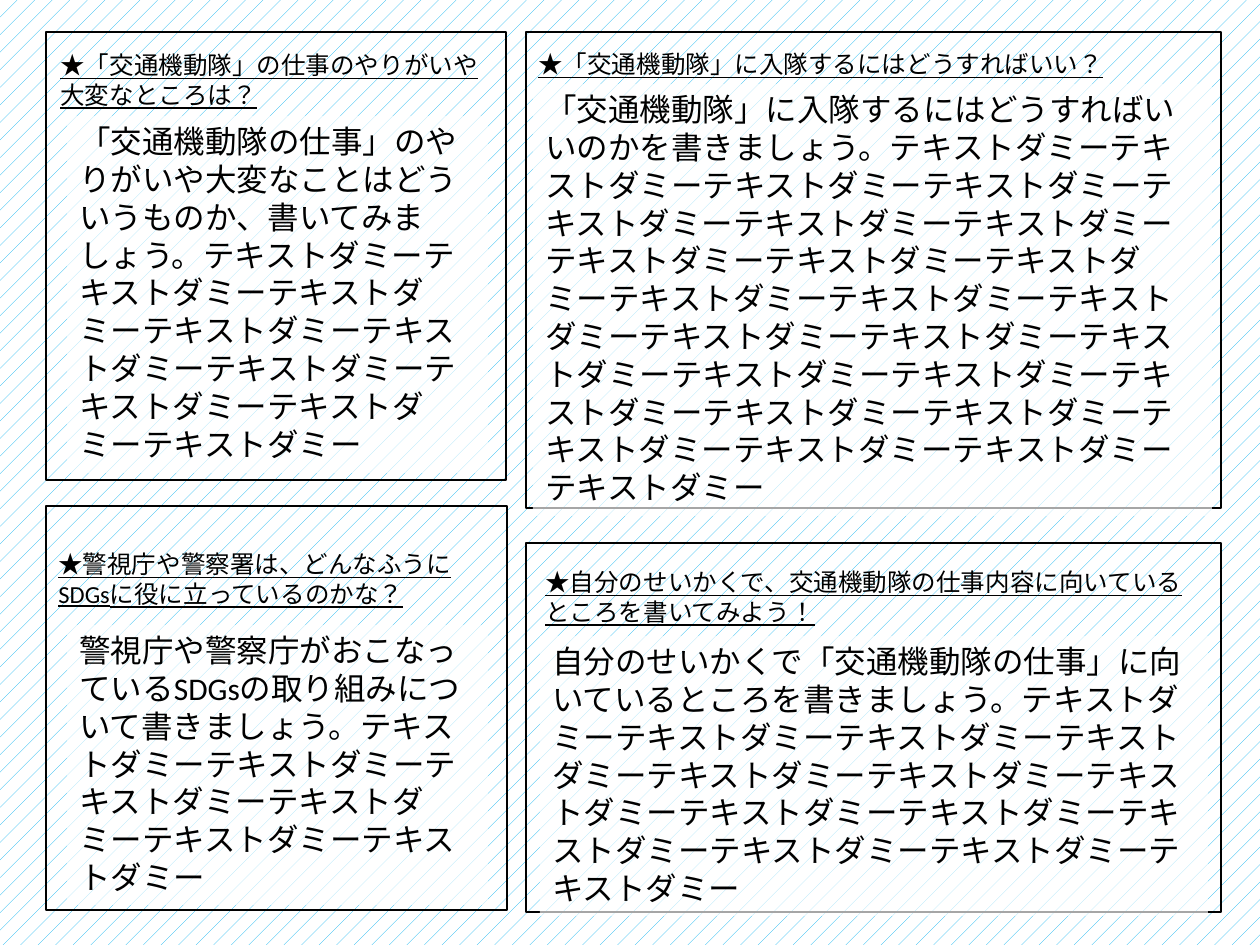
"""Build a four-panel worksheet slide about the traffic mobile unit."""
import dataclasses

import lxml.etree
import pptx
import pptx.dml.color
import pptx.enum.dml
import pptx.enum.lang
import pptx.enum.shapes
import pptx.enum.text
import pptx.oxml.ns
import pptx.util

PX = pptx.util.Inches(1) / 126
COLORS = {"ink": "000000", "paper": "FFFFFF", "stripe": "00B0F0"}
BODY_OPACITY = 65
DUMMY = "テキストダミー"
HEADING_FORMAT = {"size": pptx.util.Pt(14), "underline": True}
BODY_FORMAT = {"size": pptx.util.Pt(18)}
SHARED_FORMAT = {"name": "Calibri", "language_id": pptx.enum.lang.MSO_LANGUAGE_ID.JAPANESE}
FRAME_FORMAT = {
    "word_wrap": True,
    "auto_size": pptx.enum.text.MSO_AUTO_SIZE.SHAPE_TO_FIT_TEXT,
    "vertical_anchor": pptx.enum.text.MSO_ANCHOR.TOP,
}


@dataclasses.dataclass(frozen=True)
class Box:
    left: int
    top: int
    width: int
    height: int

    def emu(self) -> list[int]:
        return [round(value * PX) for value in dataclasses.astuple(self)]


@dataclasses.dataclass(frozen=True)
class Panel:
    frame: Box
    heading_box: Box
    heading: str
    body_box: Box
    prompt: str
    dummy_count: int


PANELS = [
    Panel(
        Box(526, 32, 695, 476),
        Box(526, 43, 747, 42),
        "★「交通機動隊」に入隊するにはどうすればいい？",
        Box(533, 84, 679, 432),
        "「交通機動隊」に入隊するにはどうすればいいのかを書きましょう。",
        25,
    ),
    Panel(
        Box(526, 543, 695, 369),
        Box(533, 561, 668, 72),
        "★自分のせいかくで、交通機動隊の仕事内容に向いているところを書いてみよう！",
        Box(540, 636, 668, 280),
        "自分のせいかくで「交通機動隊の仕事」に向いているところを書きましょう。",
        13,
    ),
    Panel(
        Box(46, 506, 461, 404),
        Box(46, 543, 461, 72),
        "★警視庁や警察署は、どんなふうにSDGsに役に立っているのかな？",
        Box(67, 625, 421, 280),
        "警視庁や警察庁がおこなっているSDGsの取り組みについて書きましょう。",
        6,
    ),
    Panel(
        Box(46, 32, 460, 448),
        Box(48, 44, 461, 72),
        "★「交通機動隊」の仕事のやりがいや大変なところは？",
        Box(67, 116, 421, 357),
        "「交通機動隊の仕事」のやりがいや大変なことはどういうものか、書いてみましょう。",
        9,
    ),
]


def color(name: str) -> pptx.dml.color.RGBColor:
    return pptx.dml.color.RGBColor.from_string(COLORS[name])


def apply_format(target: object, values: dict) -> None:
    for name, value in values.items():
        setattr(target, name, value)


def write_text(shape, text: str, text_format: dict) -> None:
    apply_format(shape.text_frame, FRAME_FORMAT)
    paragraph = shape.text_frame.paragraphs[0]
    paragraph.alignment = pptx.enum.text.PP_ALIGN.LEFT
    run = paragraph.add_run()
    run.text = text
    apply_format(run.font, SHARED_FORMAT | text_format)
    run.font.color.rgb = color("ink")


def add_rectangle(slide, box: Box):
    shape = slide.shapes.add_shape(pptx.enum.shapes.MSO_SHAPE.RECTANGLE, *box.emu())
    shape.shadow.inherit = False
    return shape


def add_frame(slide, box: Box) -> None:
    shape = add_rectangle(slide, box)
    shape.fill.background()
    shape.line.color.rgb = color("ink")
    shape.line.width = pptx.util.Pt(1)


def add_body(slide, box: Box, text: str) -> None:
    shape = add_rectangle(slide, box)
    shape.line.fill.background()
    shape.fill.solid()
    shape.fill.fore_color.rgb = color("paper")
    fill_color = shape.fill._xPr.find(".//" + pptx.oxml.ns.qn("a:srgbClr"))
    alpha = lxml.etree.SubElement(fill_color, pptx.oxml.ns.qn("a:alpha"))
    alpha.set("val", str(BODY_OPACITY * 1000))
    write_text(shape, text, BODY_FORMAT)


def add_panel(slide, panel: Panel) -> None:
    add_frame(slide, panel.frame)
    heading = slide.shapes.add_textbox(*panel.heading_box.emu())
    write_text(heading, panel.heading, HEADING_FORMAT)
    add_body(slide, panel.body_box, panel.prompt + DUMMY * panel.dummy_count)


def set_background(slide) -> None:
    fill = slide.background.fill
    fill.patterned()
    fill.pattern = pptx.enum.dml.MSO_PATTERN.PERCENT_5
    fill.fore_color.rgb = color("stripe")
    fill.back_color.rgb = color("paper")


def main() -> None:
    presentation = pptx.Presentation()
    presentation.slide_width = round(1260 * PX)
    presentation.slide_height = round(945 * PX)
    slide = presentation.slides.add_slide(presentation.slide_layouts[6])
    set_background(slide)
    for panel in PANELS:
        add_panel(slide, panel)
    presentation.save("out.pptx")


if __name__ == "__main__":
    main()
